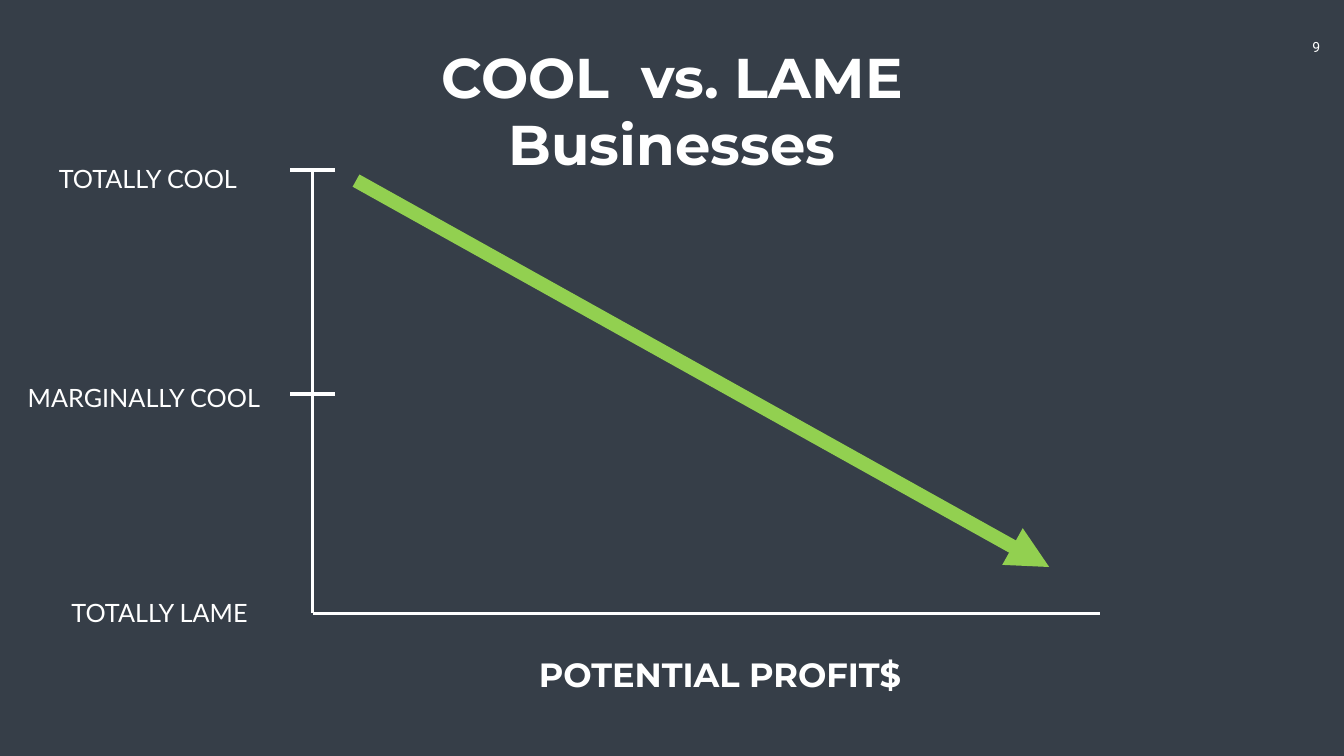
from lxml import etree
from pptx import Presentation
from pptx.dml.color import RGBColor
from pptx.enum.shapes import MSO_CONNECTOR
from pptx.enum.text import PP_ALIGN
from pptx.oxml.ns import qn
from pptx.util import Pt

WHITE, GREEN, SLATE = "FFFFFF", "92D050", "363E48"

prs = Presentation()
prs.slide_width, prs.slide_height = Pt(1919.52), Pt(1080)
slide = prs.slides.add_slide(prs.slide_layouts[6])
slide.background.fill.solid()
slide.background.fill.fore_color.rgb = RGBColor.from_string(SLATE)


def add_text(text, x, y, w, h, size, font, bold=False,
             align=PP_ALIGN.CENTER, spacing=None, inset=(7.2, 3.6)):
    tf = slide.shapes.add_textbox(Pt(x), Pt(y), Pt(w), Pt(h)).text_frame
    tf.word_wrap = True
    tf.margin_left = tf.margin_right = Pt(inset[0])
    tf.margin_top = tf.margin_bottom = Pt(inset[1])
    tf.text = text
    for p in tf.paragraphs:
        p.alignment = align
        p.line_spacing = spacing
        for r in p.runs:
            r.font.size, r.font.name, r.font.bold = Pt(size), font, bold
            r.font.color.rgb = RGBColor.from_string(WHITE)


def add_line(x1, y1, x2, y2, color=WHITE, width=5.25):
    line = slide.shapes.add_connector(MSO_CONNECTOR.STRAIGHT,
                                      Pt(x1), Pt(y1), Pt(x2), Pt(y2))
    line.line.color.rgb = RGBColor.from_string(color)
    line.line.width = Pt(width)
    etree.SubElement(line._element.spPr, qn("a:effectLst"))
    return line


# Slide number and title
add_text("9", 1843.5, 48, 73, 39, 20, "Roboto", inset=(14.4, 7.2))
add_text("COOL  vs. LAME\nBusinesses", 496, 57, 927.5, 201, 80,
         "Montserrat", bold=True)

# Axes and the horizontal caption
axis_x, axis_y = 446.5, 876.25
add_line(axis_x, 241, axis_x, axis_y)
add_line(1570.5, axis_y, axis_x, axis_y)
add_text("POTENTIAL PROFIT$", 674, 930.25, 708.5, 65.5, 48,
         "Montserrat", bold=True)

# Vertical scale labels
for label, x, y in [("TOTALLY COOL", 77, 224),
                    ("MARGINALLY COOL", 32.5, 536.5),
                    ("TOTALLY LAME", 95, 844.5)]:
    add_text(label, x, y, 803, 49, 36, "Lato",
             align=PP_ALIGN.LEFT, spacing=1.13)

# Tick marks centred on the vertical axis
for y in (242.5, 562.5):
    add_line(axis_x + 32, y, axis_x - 32, y)

# Trend arrow
arrow = add_line(508.5, 258, 1498.5, 810, GREEN, 20)
etree.SubElement(arrow.line._get_or_add_ln(), qn("a:tailEnd"), type="triangle")

prs.save("out.pptx")
